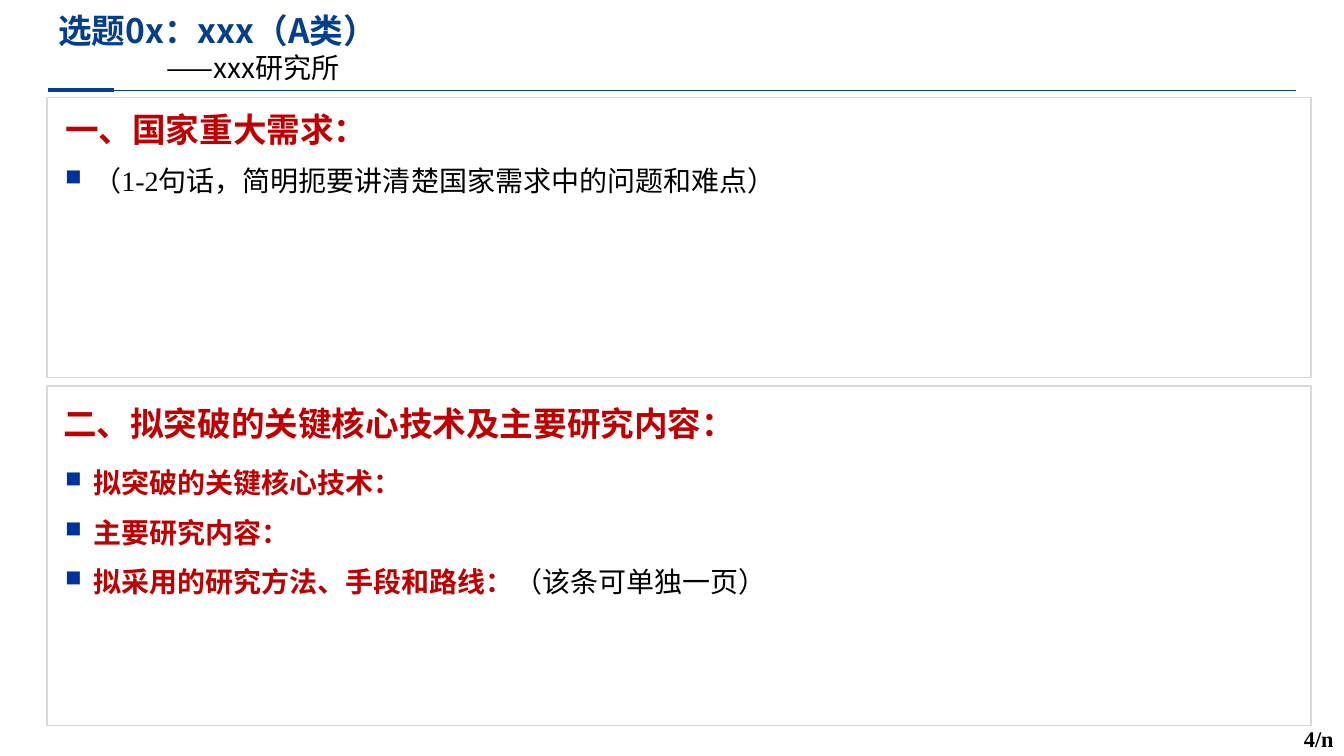
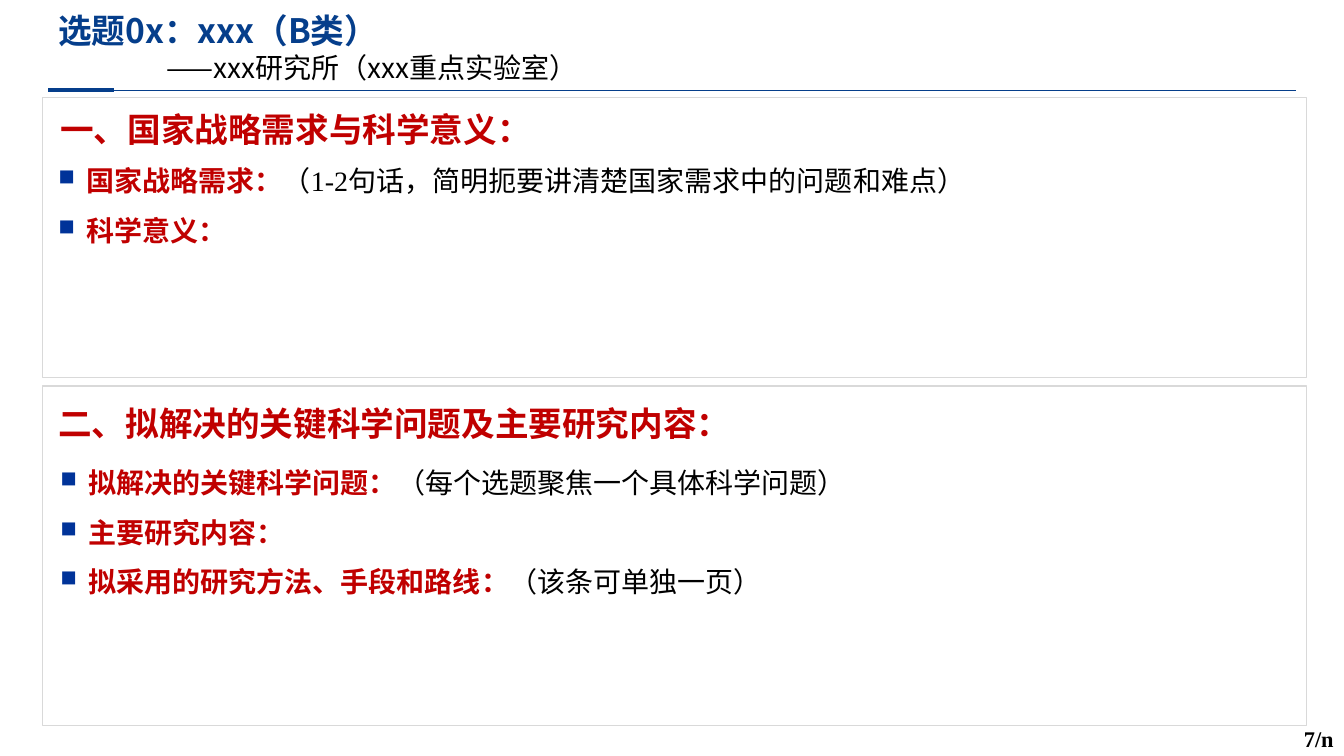
from lxml import etree
from pptx import Presentation
from pptx.dml.color import RGBColor
from pptx.enum import lang, shapes, text
from pptx.oxml import ns
from pptx.util import Cm, Pt

NAVY = RGBColor(0x05, 0x3E, 0x8B)
RED = RGBColor(0xC0, 0x00, 0x00)
BLACK = RGBColor(0x00, 0x00, 0x00)
WHITE = RGBColor(0xFF, 0xFF, 0xFF)
BORDER = RGBColor(0xD9, 0xD9, 0xD9)
BULLET = RGBColor(0x00, 0x33, 0x99)
SANS = "Noto Sans CJK SC"
SERIF = "Times New Roman"

PANEL_WIDTH = 31.85
HANGING = Cm(0.71)

TOPICS = [
    {
        "title": "选题0x：xxx（A类）",
        "institute": "——xxx研究所",
        "page": "4/n",
        "left": 1.19,
        "needs_inset": 0.2,
        "needs": "一、国家重大需求：",
        "needs_points": [("", "（1-2句话，简明扼要讲清楚国家需求中的问题和难点）")],
        "research": "二、拟突破的关键核心技术及主要研究内容：",
        "research_points": [
            ("拟突破的关键核心技术：", ""),
            ("主要研究内容：", ""),
            ("拟采用的研究方法、手段和路线：", "（该条可单独一页）"),
        ],
    },
    {
        "title": "选题0x：xxx（B类）",
        "institute": "——xxx研究所（xxx重点实验室）",
        "page": "7/n",
        "left": 1.07,
        "needs_inset": 0.15,
        "needs": "一、国家战略需求与科学意义：",
        "needs_points": [
            ("国家战略需求：", "（1-2句话，简明扼要讲清楚国家需求中的问题和难点）"),
            ("科学意义：", ""),
        ],
        "research": "二、拟解决的关键科学问题及主要研究内容：",
        "research_points": [
            ("拟解决的关键科学问题：", "（每个选题聚焦一个具体科学问题）"),
            ("主要研究内容：", ""),
            ("拟采用的研究方法、手段和路线：", "（该条可单独一页）"),
        ],
    },
]


def add_run(paragraph, wording, size, color, bold=False, face=SANS):
    run = paragraph.add_run()
    run.text = wording
    font = run.font
    font.size = Pt(size)
    font.bold = bold
    font.color.rgb = color
    font.name = face
    font.language_id = lang.MSO_LANGUAGE_ID.SIMPLIFIED_CHINESE
    east_asian = etree.SubElement(run._r.get_or_add_rPr(), ns.qn("a:ea"))
    east_asian.set("typeface", SANS)


def add_text_frame(slide, left, top, width, height, anchor=text.MSO_ANCHOR.TOP):
    box = slide.shapes.add_textbox(Cm(left), Cm(top), Cm(width), Cm(height))
    frame = box.text_frame
    frame.word_wrap = True
    frame.vertical_anchor = anchor
    return frame


def add_rule(slide, start, end, weight):
    y = Cm(2.27)
    rule = slide.shapes.add_connector(
        shapes.MSO_CONNECTOR.STRAIGHT, Cm(start), y, Cm(end), y)
    rule.line.color.rgb = NAVY
    rule.line.width = Pt(weight)
    etree.SubElement(rule._element.spPr, ns.qn("a:effectLst"))


def add_header(slide, title, institute):
    add_rule(slide, 1.83, 32.66, 0.5)
    add_rule(slide, 1.22, 2.87, 3)
    frame = add_text_frame(slide, 1.22, 0.13, 26.6, 2.13)
    add_run(frame.paragraphs[0], title, 24, NAVY, bold=True)
    subtitle = frame.add_paragraph()
    subtitle._p.get_or_add_pPr().set("marL", str(Cm(2.72)))
    add_run(subtitle, institute, 20, BLACK)


def add_page_number(slide, page):
    number = add_text_frame(slide, 32, 18.16, 1.86, 1.12).paragraphs[0]
    number.alignment = text.PP_ALIGN.RIGHT
    add_run(number, page, 16, BLACK, bold=True, face=SERIF)


def add_panel(slide, left, top, height):
    panel = slide.shapes.add_shape(
        shapes.MSO_SHAPE.RECTANGLE, Cm(left), Cm(top), Cm(PANEL_WIDTH), Cm(height))
    panel.shadow.inherit = False
    panel.fill.solid()
    panel.fill.fore_color.rgb = WHITE
    panel.line.color.rgb = BORDER
    panel.line.width = Pt(1)


def add_heading(slide, wording, left, top, height, spacing=1.0):
    frame = add_text_frame(slide, left, top, 31.2, height, text.MSO_ANCHOR.MIDDLE)
    heading = frame.paragraphs[0]
    heading.line_spacing = spacing
    add_run(heading, wording, 24, RED, bold=True)


def set_bullet(paragraph):
    properties = paragraph._p.get_or_add_pPr()
    properties.set("marL", str(HANGING))
    properties.set("indent", str(-HANGING))
    color = etree.SubElement(properties, ns.qn("a:buClr"))
    etree.SubElement(color, ns.qn("a:srgbClr")).set("val", str(BULLET))
    etree.SubElement(properties, ns.qn("a:buSzPct")).set("val", "80000")
    etree.SubElement(properties, ns.qn("a:buChar")).set("char", "■")


def add_points(slide, points, left, top):
    height = 1.26 * len(points) - 0.07
    frame = add_text_frame(slide, left, top, 31.2, height, text.MSO_ANCHOR.MIDDLE)
    frame.auto_size = text.MSO_AUTO_SIZE.SHAPE_TO_FIT_TEXT
    for index, (label, hint) in enumerate(points):
        point = frame.add_paragraph() if index else frame.paragraphs[0]
        set_bullet(point)
        point.line_spacing = 1.1
        point.space_after = Pt(9)
        if label:
            add_run(point, label, 20, RED, bold=True)
        if hint:
            add_run(point, hint, 20, BLACK, face=SERIF)


def add_topic(slide, topic):
    left = topic["left"]
    add_header(slide, topic["title"], topic["institute"])
    add_page_number(slide, topic["page"])

    add_panel(slide, left, 2.46, 7.06)
    add_heading(slide, topic["needs"], left + 0.2, 2.34, 1.55, spacing=1.25)
    add_points(slide, topic["needs_points"], left + topic["needs_inset"], 3.9)

    add_panel(slide, left, 9.73, 8.56)
    add_heading(slide, topic["research"], left + 0.15, 10.03, 1.27)
    add_points(slide, topic["research_points"], left + 0.2, 11.51)


def main():
    deck = Presentation()
    deck.slide_width = Cm(33.87)
    deck.slide_height = Cm(19.05)
    for topic in TOPICS:
        add_topic(deck.slides.add_slide(deck.slide_layouts[6]), topic)
    deck.save("out.pptx")


if __name__ == "__main__":
    main()
